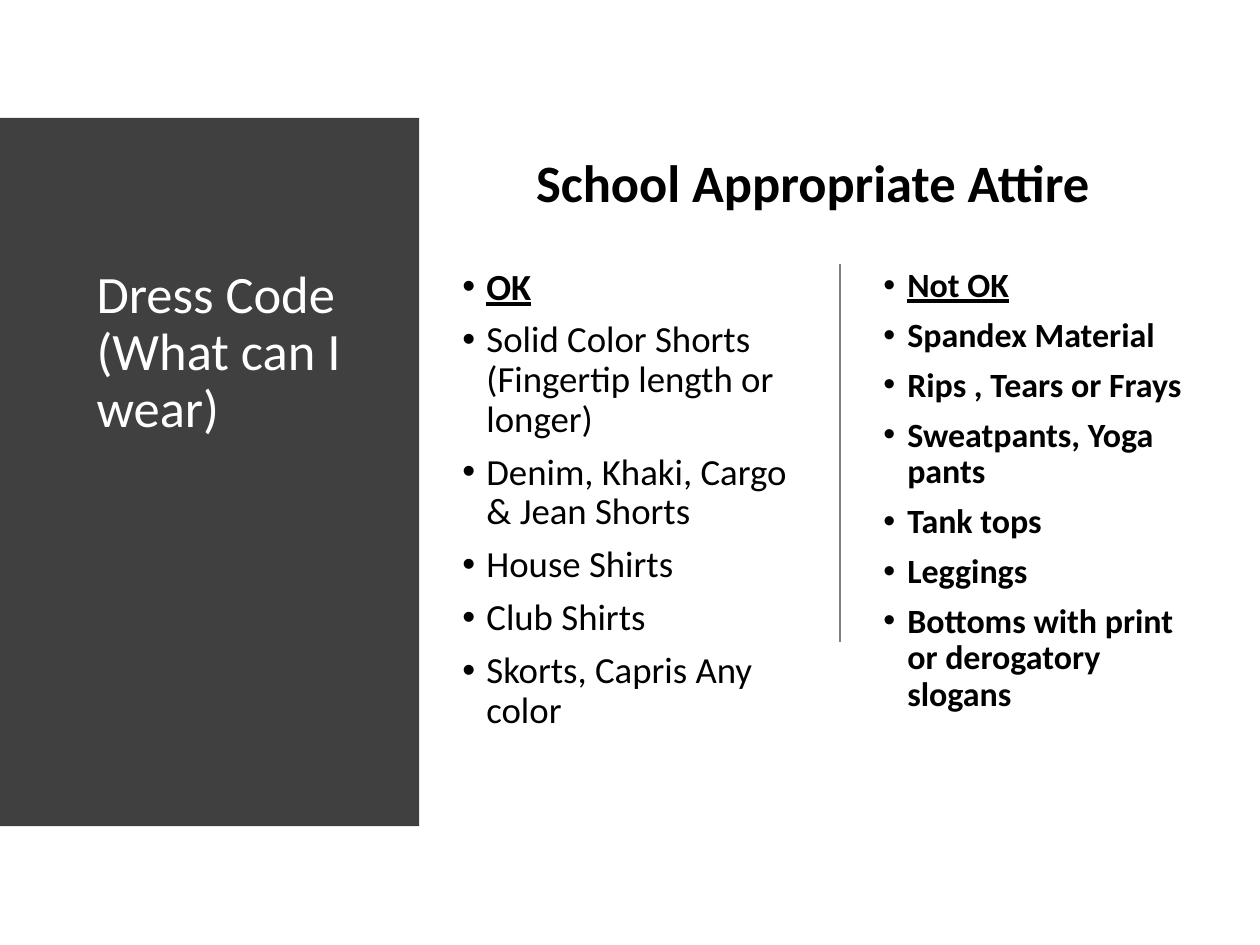
from lxml import etree
from pptx import Presentation
from pptx.dml.color import RGBColor
from pptx.enum import shapes, text
from pptx.oxml.ns import qn
from pptx.util import Inches, Pt

WHITE = RGBColor(0xFF, 0xFF, 0xFF)
BLACK = RGBColor(0, 0, 0)
CHARCOAL = RGBColor(0x40, 0x40, 0x40)
GRAY = RGBColor(0x80, 0x80, 0x80)

FONT = "Calibri"
HEADING_SIZE = 42.7
CONTENT_TOP = 2.98

ALLOWED = [
    "OK",
    "Solid Color Shorts (Fingertip length or longer)",
    "Denim, Khaki, Cargo & Jean Shorts",
    "House Shirts",
    "Club Shirts",
    "Skorts, Capris Any color",
]
FORBIDDEN = [
    "Not OK",
    "Spandex Material",
    "Rips , Tears or Frays",
    "Sweatpants, Yoga pants",
    "Tank tops",
    "Leggings",
    "Bottoms with print or derogatory slogans",
]


def add_panel(page, left, top, width, height, color):
    panel = page.shapes.add_shape(
        shapes.MSO_SHAPE.RECTANGLE,
        Inches(left), Inches(top), Inches(width), Inches(height))
    panel.shadow.inherit = False
    panel.fill.solid()
    panel.fill.fore_color.rgb = color
    panel.line.fill.background()


def add_frame(page, left, top, width, height):
    box = page.shapes.add_textbox(
        Inches(left), Inches(top), Inches(width), Inches(height))
    frame = box.text_frame
    frame.word_wrap = True
    frame.auto_size = text.MSO_AUTO_SIZE.NONE
    frame.margin_left = frame.margin_right = Inches(0.11)
    frame.margin_top = frame.margin_bottom = Inches(0.05)
    return frame


def write(para, words, size, color=BLACK, bold=False, underline=False, spacing=1.0):
    para.line_spacing = spacing
    span = para.add_run()
    span.text = words
    span.font.name = FONT
    span.font.size = Pt(size)
    span.font.color.rgb = color
    span.font.bold = bold
    span.font.underline = underline


def add_bullet(para):
    props = para._p.get_or_add_pPr()
    props.set("marL", str(Inches(0.27)))
    props.set("indent", str(-Inches(0.27)))
    etree.SubElement(props, qn("a:buFont")).set("typeface", "Arial")
    etree.SubElement(props, qn("a:buChar")).set("char", "•")


def add_list(page, items, left, width, height, size, bold):
    """Bulleted column whose first item is its underlined heading."""
    frame = add_frame(page, left, CONTENT_TOP, width, height)
    for index, item in enumerate(items):
        heading = index == 0
        para = frame.paragraphs[0] if heading else frame.add_paragraph()
        add_bullet(para)
        if not heading:
            para.space_before = Pt(10.7)
        write(para, item, size, bold=bold or heading, underline=heading, spacing=0.9)


def add_divider(page, left, top, bottom):
    line = page.shapes.add_connector(
        shapes.MSO_CONNECTOR.STRAIGHT,
        Inches(left), Inches(top), Inches(left), Inches(bottom))
    line.line.color.rgb = GRAY
    line.line.width = Pt(1)
    etree.SubElement(line._element.spPr, qn("a:effectLst"))


def main():
    deck = Presentation()
    deck.slide_width = Inches(14.22)
    deck.slide_height = Inches(10.67)
    page = deck.slides.add_slide(deck.slide_layouts[6])

    # Side panel with the slide title
    add_panel(page, 0, 1.33, 4.73, 8, CHARCOAL)
    title = add_frame(page, 0.98, CONTENT_TOP, 3.38, 5.09)
    write(title.paragraphs[0], "Dress Code (What can I wear)", HEADING_SIZE,
          color=WHITE, spacing=0.9)

    # Two lists with a divider between them
    add_list(page, ALLOWED, 5.11, 4, 5.82, size=29.9, bold=False)
    add_divider(page, 9.48, CONTENT_TOP, 7.25)
    add_list(page, FORBIDDEN, 9.86, 3.73, 5.39, size=27.6, bold=True)

    # Heading above the lists
    heading = add_frame(page, 5.94, 1.64, 6.57, 0.83)
    write(heading.paragraphs[0], "School Appropriate Attire", HEADING_SIZE, bold=True)

    deck.save("out.pptx")


if __name__ == "__main__":
    main()
